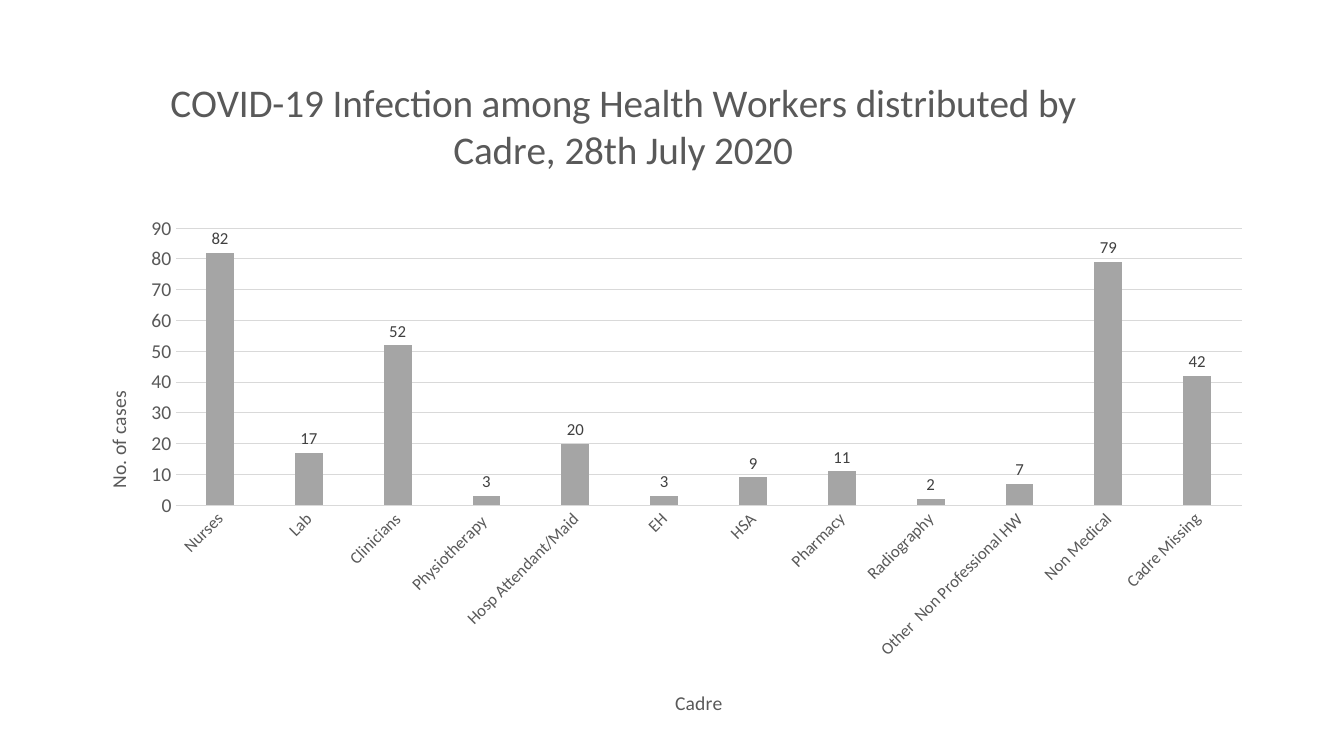
from lxml import etree
from pptx import Presentation
from pptx.chart.data import CategoryChartData
from pptx.dml.color import RGBColor
from pptx.enum.chart import XL_CHART_TYPE as ChartType
from pptx.enum.chart import XL_LABEL_POSITION as LabelPos
from pptx.enum.chart import XL_TICK_MARK as Tick
from pptx.oxml.ns import qn
from pptx.util import Cm, Pt

FONT = "Calibri"
COLORS = {"text": "595959", "label": "404040", "grid": "D9D9D9", "bar": "A5A5A5"}
CASES = {
    "Nurses": 82,
    "Lab": 17,
    "Clinicians": 52,
    "Physiotherapy ": 3,
    "Hosp Attendant/Maid": 20,
    "EH": 3,
    "HSA": 9,
    "Pharmacy": 11,
    "Radiography": 2,
    "Other  Non Professional HW": 7,
    "Non Medical": 79,
    "Cadre Missing": 42,
}


def rgb(name):
    return RGBColor.from_string(COLORS[name])


def style_font(font, size, color="text"):
    font.name = FONT
    font.size = Pt(size)
    font.bold = False
    font.color.rgb = rgb(color)


def style_line(line):
    line.color.rgb = rgb("grid")
    line.width = Pt(0.75)


def set_layout(parent, after, **values):
    """Place a chart part by fractions of the chart area."""
    layout = parent.find(qn("c:layout"))
    if layout is None:
        layout = etree.Element(qn("c:layout"))
        if after is None:
            parent.insert(0, layout)
        else:
            parent.find(qn(after)).addnext(layout)
    for child in list(layout):
        layout.remove(child)
    manual = etree.SubElement(layout, qn("c:manualLayout"))
    for tag, value in values.items():
        etree.SubElement(manual, qn(f"c:{tag}"), val=str(value))


def add_title(owner, text, size, x, y, angle=0):
    """Title a chart or an axis, with its top left corner at x, y."""
    owner.has_title = True
    title = owner.chart_title if hasattr(owner, "chart_title") else owner.axis_title
    tf = title.text_frame
    r = tf.paragraphs[0].add_run()
    r.text = text
    style_font(r.font, size)
    # Rotation is counted in 60000ths of a degree
    body = tf._txBody.find(qn("a:bodyPr"))
    body.set("rot", str(angle * 60000))
    body.set("vert", "horz")
    set_layout(title._element, "c:tx", xMode="edge", yMode="edge", x=x, y=y)


def style_axis(axis, size):
    axis.major_tick_mark = axis.minor_tick_mark = Tick.NONE
    style_font(axis.tick_labels.font, size)


def style_bars(plot):
    plot.gap_width = 219
    plot.overlap = -27
    plot.vary_by_categories = False
    fill = plot.series[0].format.fill
    fill.solid()
    fill.fore_color.rgb = rgb("bar")
    plot.has_data_labels = True
    labels = plot.data_labels
    labels.show_value = True
    labels.position = LabelPos.OUTSIDE_END
    style_font(labels.font, 12, "label")


def add_cases_chart(s):
    data = CategoryChartData()
    data.categories = list(CASES)
    data.add_series("Series 1", list(CASES.values()))
    frame = s.shapes.add_chart(ChartType.COLUMN_CLUSTERED,
                               Cm(0.99), Cm(1.04), Cm(31.24), Cm(17.45), data)
    chart = frame.chart
    chart.has_legend = False
    chart.font.name = FONT
    chart.font.size = Pt(10)
    style_bars(chart.plots[0])

    # Category axis
    cadres = chart.category_axis
    style_axis(cadres, 12)
    style_line(cadres.format.line)
    cadres._element.find(qn("c:txPr")).find(qn("a:bodyPr")).set("rot", str(-45 * 60000))

    # Value axis
    counts = chart.value_axis
    style_axis(counts, 14)
    counts.minimum_scale, counts.maximum_scale, counts.major_unit = 0, 90, 10
    counts.format.line.fill.background()
    counts.has_major_gridlines = True
    style_line(counts.major_gridlines.format.line)

    # Titles and plot area
    add_title(chart, "COVID-19 Infection among Health Workers distributed by "
              "Cadre, 28th July 2020", 28, 0.1, 0.04)
    add_title(cadres, "Cadre", 14, 0.51, 0.93)
    add_title(counts, "No. of cases", 14, 0.05, 0.5, angle=-90)
    plot_area = chart._chartSpace.chart.plotArea
    set_layout(plot_area, None, layoutTarget="inner", xMode="edge", yMode="edge",
               x=0.11, y=0.27, w=0.86, h=0.4)


def main():
    prs = Presentation()
    prs.slide_width, prs.slide_height = Cm(33.87), Cm(19.05)
    s = prs.slides.add_slide(prs.slide_layouts[6])
    add_cases_chart(s)
    prs.save("out.pptx")


if __name__ == "__main__":
    main()
